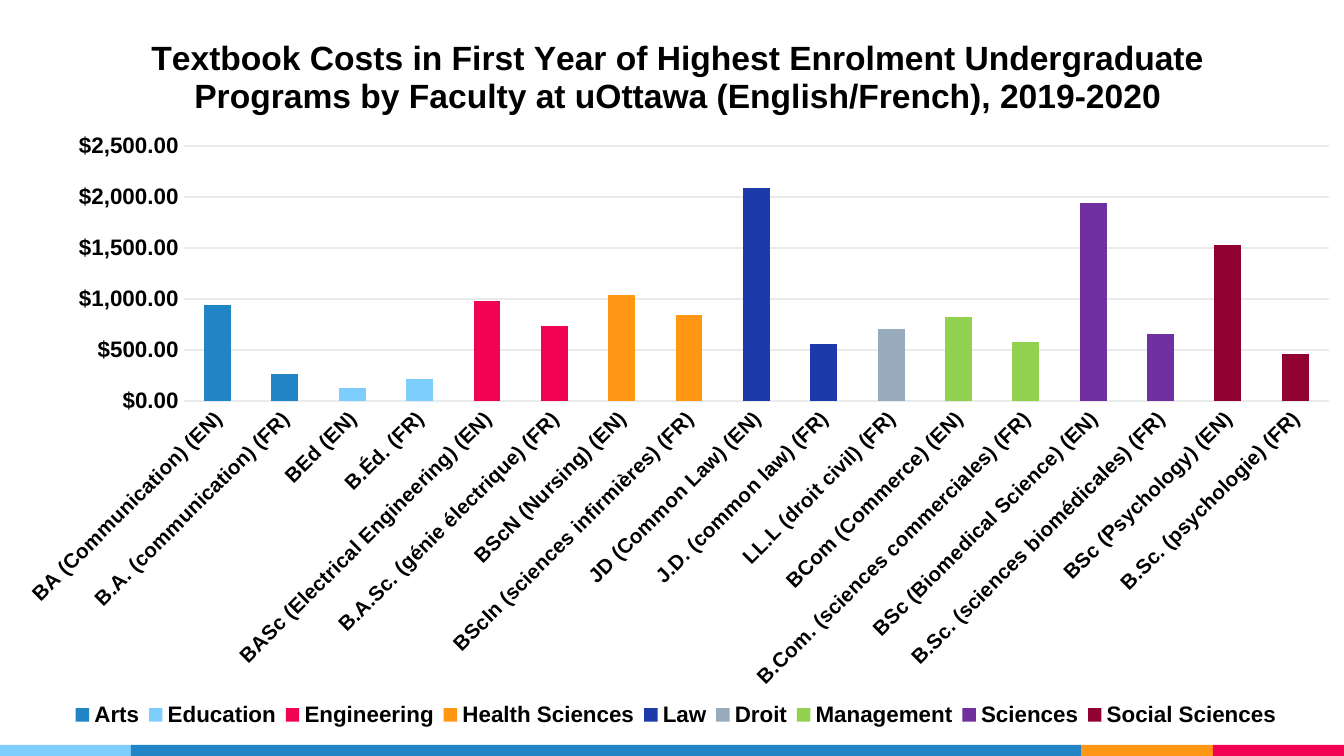
from lxml import etree
from pptx import Presentation
from pptx import util as u
from pptx.chart.data import CategoryChartData
from pptx.dml.color import RGBColor
from pptx.enum import chart as ch
from pptx.enum import shapes
from pptx.oxml.ns import qn

PX = 914400 / 134.4
FONT = "Arial"
GRID = "E8EAEC"
MONEY = '"$"#,##0.00'
CHART_WIDTH, CHART_HEIGHT = 1356, 741

FACULTIES = [
    ("Arts", "2185C5", {"BA (Communication) (EN)": 940, "B.A. (communication) (FR)": 260}),
    ("Education", "7ECEFD", {"BEd (EN)": 130, "B.Éd. (FR)": 210}),
    ("Engineering", "F20253", {"BASc (Electrical Engineering) (EN)": 980,
                               "B.A.Sc. (génie électrique) (FR)": 730}),
    ("Health Sciences", "FF9715", {"BScN (Nursing) (EN)": 1040,
                                   "BScIn (sciences infirmières) (FR)": 840}),
    ("Law", "1C3AA9", {"JD (Common Law) (EN)": 2090, "J.D. (common law) (FR)": 560}),
    ("Droit", "97ABBC", {"LL.L (droit civil) (FR)": 700}),
    ("Management", "92D050", {"BCom (Commerce) (EN)": 820,
                              "B.Com. (sciences commerciales) (FR)": 580}),
    ("Sciences", "7030A0", {"BSc (Biomedical Science) (EN)": 1940,
                            "B.Sc. (sciences biomédicales) (FR)": 660}),
    ("Social Sciences", "910132", {"BSc (Psychology) (EN)": 1530,
                                   "B.Sc. (psychologie) (FR)": 460}),
]


def px(length):
    return u.Emu(round(length * PX))


def color(value):
    return RGBColor.from_string(value)


def style_font(font, size, fill="000000", bold=True):
    font.name = FONT
    font.size = u.Pt(size)
    font.bold = bold
    font.color.rgb = color(fill)


def write_text(frame, content, **style):
    paragraph = frame.paragraphs[0]
    run = paragraph.add_run()
    run.text = content
    style_font(run.font, **style)


def style_line(line):
    line.color.rgb = color(GRID)
    line.width = u.Pt(0.75)


def place(part, index, left, top, width, height, **settings):
    for old in part.findall(qn("c:layout")):
        part.remove(old)
    layout = etree.Element(qn("c:layout"))
    manual = etree.SubElement(layout, qn("c:manualLayout"))
    settings.update(xMode="edge", yMode="edge",
                    x=left / CHART_WIDTH, y=top / CHART_HEIGHT,
                    w=width / CHART_WIDTH, h=height / CHART_HEIGHT)
    for name, value in settings.items():
        etree.SubElement(manual, qn(f"c:{name}")).set("val", str(value))
    part.insert(index, layout)


class Deck:
    """Holds the presentation style and the current slide."""

    def __init__(self, width, height):
        self.presentation = Presentation()
        self.presentation.slide_width = px(width)
        self.presentation.slide_height = px(height)
        self.slide = self.presentation.slides.add_slide(self.presentation.slide_layouts[6])

    def band(self, left, top, width, height, fill):
        shape = self.slide.shapes.add_shape(
            shapes.MSO_SHAPE.RECTANGLE, px(left), px(top), px(width), px(height))
        shape.shadow.inherit = False
        shape.fill.solid()
        shape.fill.fore_color.rgb = color(fill)
        shape.line.fill.background()

    def cost_chart(self, left, top, title):
        data = CategoryChartData(number_format=MONEY)
        programs = [program for _, _, costs in FACULTIES for program in costs]
        data.categories = programs
        for name, _, costs in FACULTIES:
            data.add_series(name, [costs.get(program) for program in programs])
        chart = self.slide.shapes.add_chart(
            ch.XL_CHART_TYPE.COLUMN_STACKED, px(left), px(top),
            px(CHART_WIDTH), px(CHART_HEIGHT), data).chart
        style_font(chart.font, 10, "677480", False)
        chart.has_title = True
        write_text(chart.chart_title.text_frame, title, size=18)
        chart.chart_title.include_in_layout = False
        self.bars(chart.plots[0])
        self.axes(chart.category_axis, chart.value_axis)
        chart.has_legend = True
        chart.legend.position = ch.XL_LEGEND_POSITION.BOTTOM
        chart.legend.include_in_layout = False
        style_font(chart.legend.font, 12)
        place(chart._chartSpace.chart.plotArea, 0, 184, 138, 1145, 255, layoutTarget="inner")
        place(chart.legend._element, 1, 66, 690, 1220, 34)

    def bars(self, plot):
        plot.gap_width = 150
        plot.overlap = 100
        plot.vary_by_categories = False
        for series, (_, fill, _) in zip(plot.series, FACULTIES):
            series.format.fill.solid()
            series.format.fill.fore_color.rgb = color(fill)

    def axes(self, programs, costs):
        for axis, size in ((programs, 11), (costs, 12)):
            axis.major_tick_mark = axis.minor_tick_mark = ch.XL_TICK_MARK.NONE
            style_font(axis.tick_labels.font, size)
        style_line(programs.format.line)
        programs._element.find(f"{qn('c:txPr')}/{qn('a:bodyPr')}").set("rot", "-2700000")
        costs.format.line.fill.background()
        costs.has_major_gridlines = True
        style_line(costs.major_gridlines.format.line)
        costs.minimum_scale, costs.maximum_scale, costs.major_unit = 0, 2500, 500
        costs.tick_labels.number_format = MONEY
        costs.tick_labels.number_format_is_linked = False


def main():
    deck = Deck(1344, 756)
    left = 0
    for width, fill in ((131, "7ECEFD"), (950, "2185C5"), (132, "FF9715"), (131, "F20253")):
        deck.band(left, 745, width, 11, fill)
        left += width
    deck.cost_chart(0, 8, "Textbook Costs in First Year of Highest Enrolment Undergraduate "
                          "Programs by Faculty at uOttawa (English/French), 2019-2020")
    deck.presentation.save("out.pptx")


if __name__ == "__main__":
    main()
